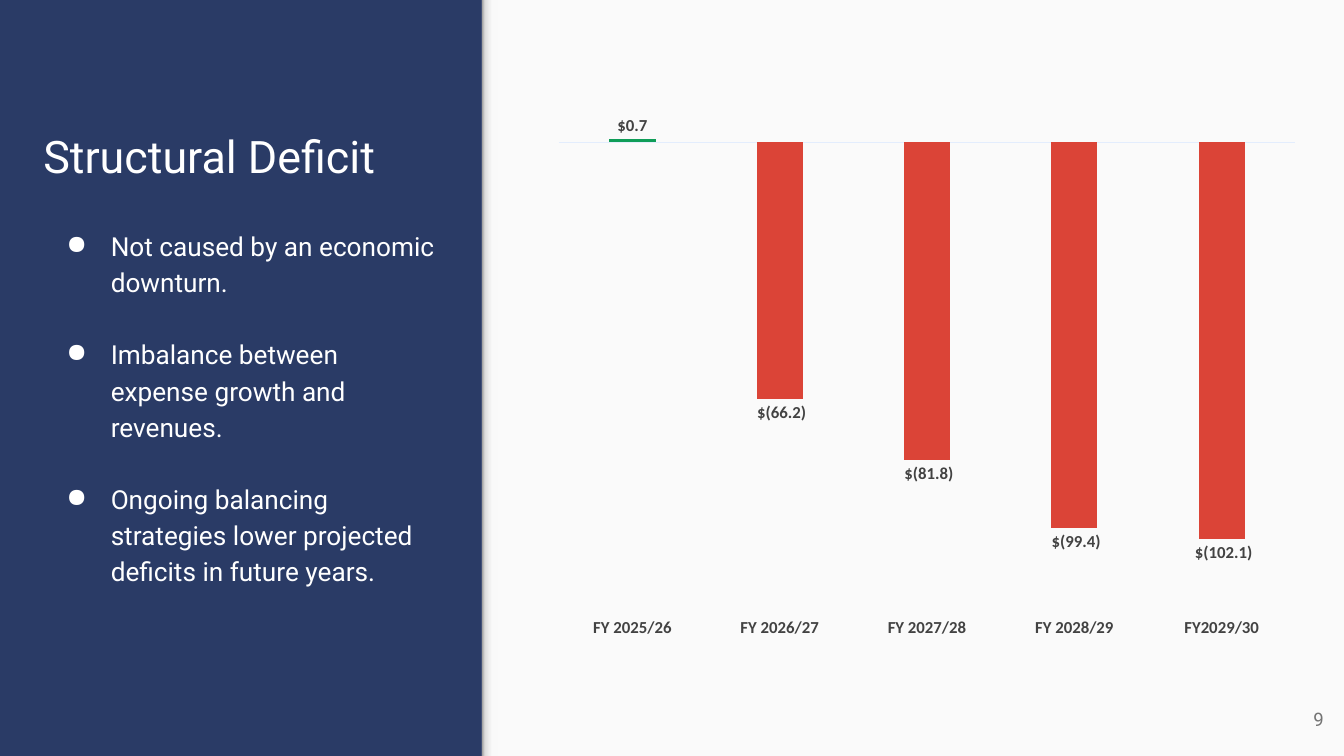
from copy import deepcopy
from dataclasses import dataclass

from lxml import etree
from pptx import Presentation
from pptx.chart.data import CategoryChartData
from pptx.dml.color import RGBColor
from pptx.enum.chart import XL_CHART_TYPE, XL_LABEL_POSITION, XL_TICK_LABEL_POSITION, XL_TICK_MARK
from pptx.enum.shapes import MSO_SHAPE
from pptx.enum.text import MSO_ANCHOR, MSO_AUTO_SIZE, PP_ALIGN
from pptx.oxml.ns import qn
from pptx.util import Emu, Pt

RECT = MSO_SHAPE.RECTANGLE
COLUMN = XL_CHART_TYPE.COLUMN_CLUSTERED
OUTSIDE = XL_LABEL_POSITION.OUTSIDE_END
LOW = XL_TICK_LABEL_POSITION.LOW
NO_TICK = XL_TICK_MARK.NONE
LEFT, RIGHT = PP_ALIGN.LEFT, PP_ALIGN.RIGHT
TOP, MIDDLE, BOTTOM = MSO_ANCHOR.TOP, MSO_ANCHOR.MIDDLE, MSO_ANCHOR.BOTTOM
NO_FIT = MSO_AUTO_SIZE.NONE

SCALE = 9144  # EMU in one px, 100 px to the inch
WIDE, HIGH = 1333, 750
EDGE = 478  # left edge of the light panel
NAVY, PALE, WHITE = "2A3B66", "FAFAFA", "FFFFFF"
GREY, INK, RULE = "737373", "424242", "E3EDFD"
RED, GREEN = "DB4437", "0F9D58"
SHADE = [(0, "999999"), (0.2, "DEDEDE"), (0.64, "F9F9F9"), (1, "F9F9F9")]
MONEY = r'_("$"* #,##0.0_);_("$"* \(#,##0.0\);_("$"* "-"??_);_(@_)'
GAPS = {
    "FY 2025/26": 0.7,
    "FY 2026/27": -66.2,
    "FY 2027/28": -81.8,
    "FY 2028/29": -99.4,
    "FY2029/30": -102.1,
}


@dataclass
class Block:
    at: tuple[int, int, int, int]
    lines: list[str]
    size: float
    color: str = WHITE
    align: PP_ALIGN = LEFT
    anchor: MSO_ANCHOR = TOP
    bullet: str = ""


TITLE = Block((33, 52, 409, 139), ["Structural Deficit"], 32, anchor=BOTTOM)
POINTS = Block((33, 214, 409, 461), [
    "Not caused by an economic downturn.",
    "Imbalance between expense growth and revenues.",
    "Ongoing balancing strategies lower projected deficits in future years.",
], 18.7, bullet="●")
NUMBER = Block((1243, 685, 80, 57), ["9"], 13.3, GREY, RIGHT, MIDDLE)


def px(n: int) -> Emu:
    return Emu(n * SCALE)


def rgb(code: str) -> RGBColor:
    return RGBColor.from_string(code)


def add_rect(slide, at: tuple[int, int, int, int]):
    shape = slide.shapes.add_shape(RECT, *map(px, at))
    shape.shadow.inherit = False
    shape.line.fill.background()
    return shape


def add_bullet(para, mark: str) -> None:
    props = para._p.get_or_add_pPr()
    props.set("marL", str(px(67)))
    props.set("indent", str(px(-44)))
    tint = etree.SubElement(props, qn("a:buClr"))
    etree.SubElement(tint, qn("a:srgbClr"), val=WHITE)
    etree.SubElement(props, qn("a:buChar"), char=mark)


def fill_text(shape, block: Block) -> None:
    shape.left, shape.top, shape.width, shape.height = map(px, block.at)
    frame = shape.text_frame
    frame.text = "\n".join(block.lines)
    frame.word_wrap = True
    frame.auto_size = NO_FIT
    frame.vertical_anchor = block.anchor
    frame.margin_left = frame.margin_right = px(10)
    frame.margin_top = frame.margin_bottom = px(10)
    for i, para in enumerate(frame.paragraphs):
        para.alignment = block.align
        para.line_spacing = 1.0
        if block.bullet:
            add_bullet(para, block.bullet)
            para.line_spacing = 1.15
            para.space_before = Pt(25.7 if i else 0)
        for run in para.runs:
            run.font.name = "Roboto"
            run.font.size = Pt(block.size)
            run.font.color.rgb = rgb(block.color)


def add_shade(slide) -> None:
    fill = add_rect(slide, (EDGE, 0, 16, HIGH)).fill
    fill.gradient()
    fill.gradient_angle = 0
    stops = fill._fill._gradFill.find(qn("a:gsLst"))
    while len(stops) < len(SHADE):
        stops.append(deepcopy(stops[0]))
    for stop, (place, color) in zip(fill.gradient_stops, SHADE):
        stop.position = place
        stop.color.rgb = rgb(color)


def set_font(font) -> None:
    font.name = "Calibri"
    font.size = Pt(12)
    font.bold = True
    font.color.rgb = rgb(INK)


def add_graph(slide) -> None:
    data = CategoryChartData()
    data.categories = list(GAPS)
    data.add_series("Series 1", list(GAPS.values()))
    place = map(px, (539, 52, 761, 593))
    chart = slide.shapes.add_chart(COLUMN, *place, data).chart
    chart.has_legend = False
    chart.has_title = False
    set_font(chart.font)

    # Axes
    years, money = chart.category_axis, chart.value_axis
    years.tick_label_position = LOW
    years.major_tick_mark = years.minor_tick_mark = NO_TICK
    years.format.line.color.rgb = rgb(RULE)
    years.format.line.width = Pt(0.75)
    set_font(years.tick_labels.font)
    money.visible = False
    money.has_major_gridlines = False
    money.minimum_scale, money.maximum_scale = -120, 20

    # Bars and their labels
    plot = chart.plots[0]
    plot.vary_by_categories = False
    plot.gap_width, plot.overlap = 219, -27
    bars = plot.series[0]
    bars.invert_if_negative = False
    bars.format.fill.solid()
    bars.format.fill.fore_color.rgb = rgb(RED)
    gain = bars.points[0].format.fill
    gain.solid()
    gain.fore_color.rgb = rgb(GREEN)
    labels = bars.data_labels
    labels.show_value = True
    labels.position = OUTSIDE
    labels.number_format = MONEY
    labels.number_format_is_linked = False
    set_font(labels.font)


def main() -> None:
    deck = Presentation()
    deck.slide_width, deck.slide_height = px(WIDE), px(HIGH)
    slide = deck.slides.add_slide(deck.slide_layouts[5])

    # Backdrop
    slide.background.fill.solid()
    slide.background.fill.fore_color.rgb = rgb(NAVY)
    panel = add_rect(slide, (EDGE, 0, WIDE - EDGE, HIGH))
    panel.fill.solid()
    panel.fill.fore_color.rgb = rgb(PALE)
    add_shade(slide)

    # Text
    fill_text(slide.shapes.title, TITLE)
    for block in (POINTS, NUMBER):
        fill_text(slide.shapes.add_textbox(*map(px, block.at)), block)

    # Chart
    add_graph(slide)
    deck.save("out.pptx")


if __name__ == "__main__":
    main()
